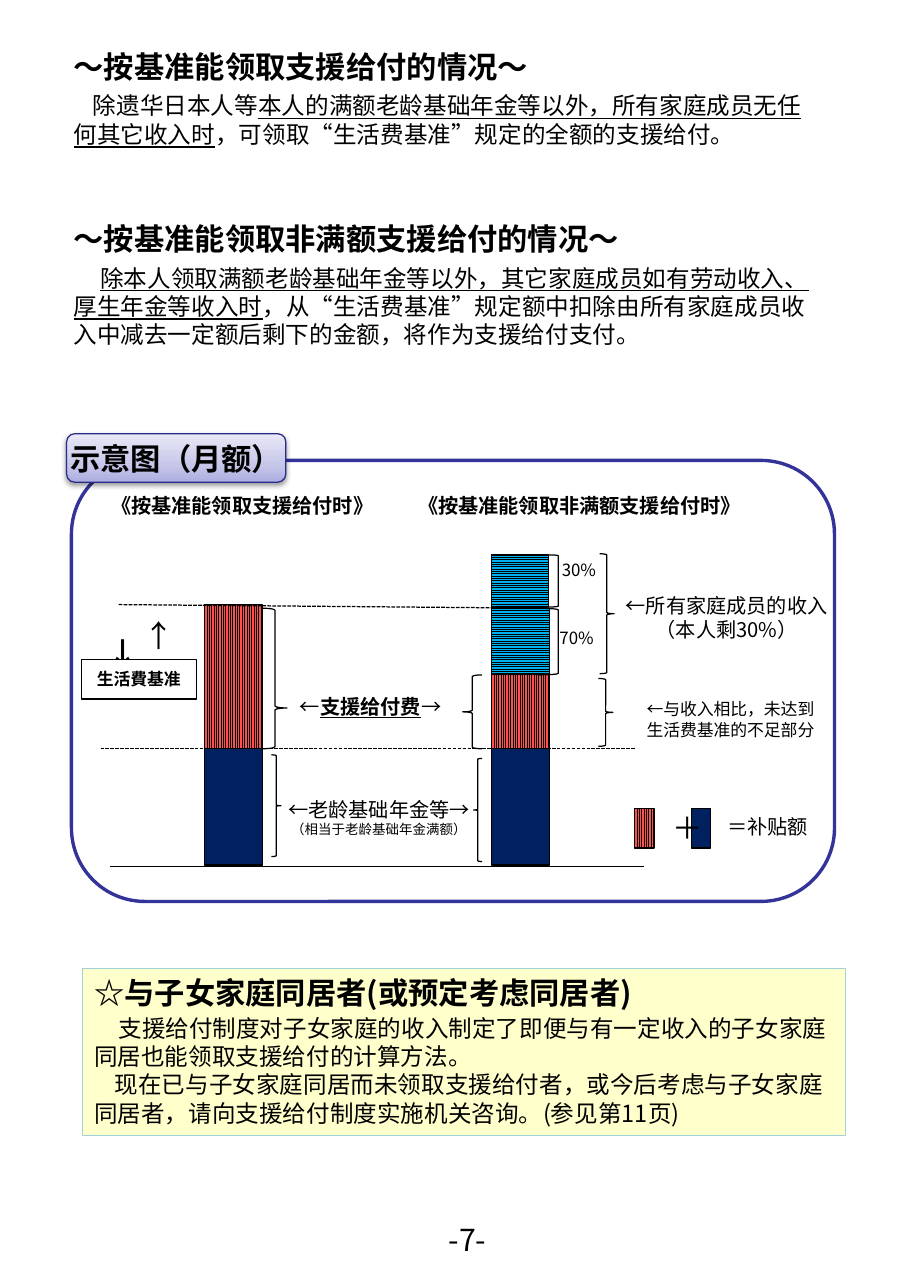
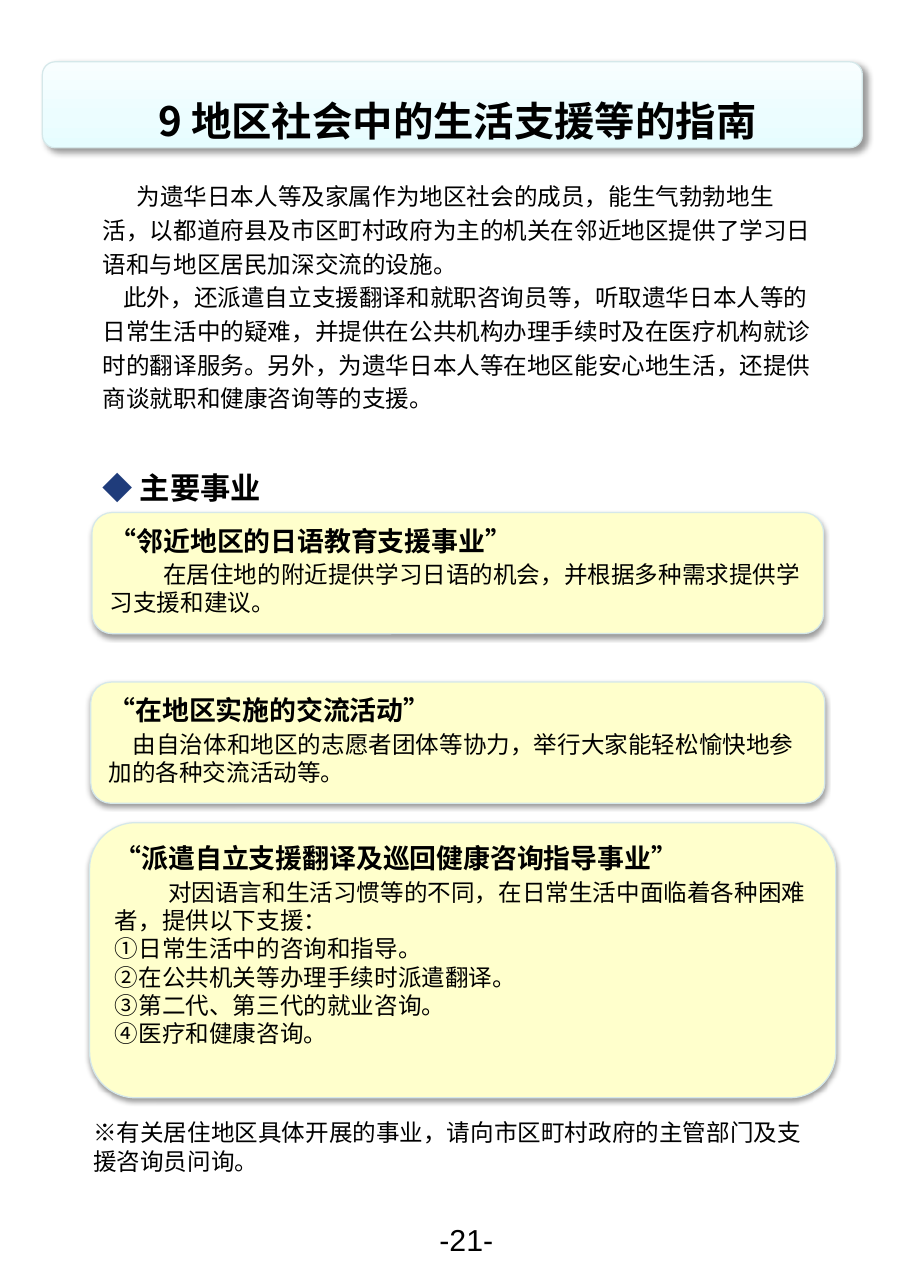
from dataclasses import dataclass
from typing import Optional

from lxml.etree import SubElement
from pptx import Presentation
from pptx.dml.color import RGBColor
from pptx.enum.dml import MSO_LINE, MSO_PATTERN
from pptx.enum.shapes import MSO_CONNECTOR, MSO_SHAPE
from pptx.enum.text import MSO_ANCHOR, PP_ALIGN
from pptx.oxml.ns import qn
from pptx.util import Pt

EMU_PER_PX = 9144
PAGE_WIDTH, PAGE_HEIGHT = 748, 1063
FONT = "Noto Sans CJK SC"
COLORS = {
    "black": "000000", "white": "FFFFFF", "frame": "333399", "tab_line": "2A2A89",
    "red": "FF5050", "navy": "002060", "blue": "00B0F0", "cream": "FFFFCC",
    "note_line": "9ED3D7", "card_line": "D5E8EA", "diamond": "1F3C7B",
}
TAB_GRADIENT = ((0, "ADADE1"), (35, "C6C6E9"), (100, "E9E9F7"))
TITLE_GRADIENT = ((0, "E6FDFF"), (35, "ECFDFF"), (100, "F8FEFF"))
INSETS = (10, 5, 10, 5)


@dataclass(frozen=True)
class Area:
    left: int
    top: int
    width: int
    height: int


@dataclass(frozen=True)
class Span:
    text: str
    size: Optional[int] = None
    bold: Optional[bool] = None
    underline: Optional[bool] = None
    color: Optional[str] = None


@dataclass(frozen=True)
class Para:
    spans: tuple[Span, ...]
    size: int = 14
    bold: bool = False
    align: PP_ALIGN = PP_ALIGN.LEFT
    indent: int = 0
    before: int = 0
    line: Optional[object] = None
    font: str = FONT


@dataclass(frozen=True)
class Shadow:
    alpha: int
    blur: float
    distance: float
    angle: int


@dataclass(frozen=True)
class Bracket:
    kind: MSO_SHAPE
    area: Area
    middle: Optional[float] = None


@dataclass(frozen=True)
class Card:
    area: Area
    heading: str
    indent: int
    body: str
    items: tuple[str, ...] = ()


SOFT_SHADOW = Shadow(38, 3.1, 1.6, 90)
TITLE_SHADOW = Shadow(40, 4, 3, 45)


def px(length: int) -> int:
    return length * EMU_PER_PX


def rgb(name: str) -> RGBColor:
    return RGBColor.from_string(COLORS[name])


def plain(text: str, size: int = 14, **style) -> Para:
    return Para((Span(text),), size, **style)


def centered(text: str, size: int, **style) -> Para:
    return plain(text, size, align=PP_ALIGN.CENTER, **style)


def write(shape, paras: list[Para], insets=INSETS, anchor=MSO_ANCHOR.TOP, wrap=True) -> None:
    frame = shape.text_frame
    frame.word_wrap = wrap
    frame.vertical_anchor = anchor
    frame.margin_left, frame.margin_top, frame.margin_right, frame.margin_bottom = map(px, insets)
    for index, para in enumerate(paras):
        paragraph = frame.add_paragraph() if index else frame.paragraphs[0]
        paragraph.alignment = para.align
        paragraph.space_before = Pt(para.before)
        if para.line:
            paragraph.line_spacing = para.line
        font = paragraph.font
        font.name, font.size, font.bold = para.font, Pt(para.size), para.bold
        font.color.rgb = rgb("black")
        properties = paragraph._p.pPr
        properties.set("indent", str(px(para.indent)))
        SubElement(properties.find(qn("a:defRPr")), qn("a:ea")).set("typeface", para.font)
        for span in para.spans:
            run = paragraph.add_run()
            run.text = span.text
            if span.size:
                run.font.size = Pt(span.size)
            if span.bold is not None:
                run.font.bold = span.bold
            if span.underline is not None:
                run.font.underline = span.underline
            if span.color:
                run.font.color.rgb = rgb(span.color)


def add_text(page, area: Area, paras: list[Para], **options):
    box = page.shapes.add_textbox(px(area.left), px(area.top), px(area.width), px(area.height))
    write(box, paras, **options)
    return box


def add_block(page, kind: MSO_SHAPE, area: Area, fill: Optional[str] = None,
              line: str = "black", width: float = 0.75):
    shape = page.shapes.add_shape(kind, px(area.left), px(area.top), px(area.width), px(area.height))
    shape.shadow.inherit = False
    shape.line.color.rgb = rgb(line)
    shape.line.width = Pt(width)
    if fill:
        shape.fill.solid()
        shape.fill.fore_color.rgb = rgb(fill)
    else:
        shape.fill.background()
    return shape


def hatch(shape, pattern: MSO_PATTERN, color: str) -> None:
    shape.fill.patterned()
    shape.fill.pattern = pattern
    shape.fill.fore_color.rgb = rgb("black")
    shape.fill.back_color.rgb = rgb(color)


def shade(shape, stops: tuple[tuple[int, str], ...]) -> None:
    shape.fill.gradient()
    shape.fill.gradient_angle = 90
    stop_list = shape._element.spPr.find(qn("a:gradFill")).find(qn("a:gsLst"))
    for old in list(stop_list):
        stop_list.remove(old)
    for position, color in stops:
        stop = SubElement(stop_list, qn("a:gs"), pos=str(position * 1000))
        SubElement(stop, qn("a:srgbClr"), val=color)


def cast(shape, shadow: Shadow) -> None:
    effects = shape._element.spPr.find(qn("a:effectLst"))
    outer = SubElement(effects, qn("a:outerShdw"), blurRad=str(Pt(shadow.blur)),
                       dist=str(Pt(shadow.distance)), dir=str(shadow.angle * 60000),
                       rotWithShape="0")
    color = SubElement(outer, qn("a:srgbClr"), val=COLORS["black"])
    SubElement(color, qn("a:alpha"), val=str(shadow.alpha * 1000))


def add_line(page, start: tuple[int, int], end: tuple[int, int], dashed: bool = False) -> None:
    line = page.shapes.add_connector(MSO_CONNECTOR.STRAIGHT, *map(px, start + end))
    line.line.color.rgb = rgb("black")
    line.line.width = Pt(0.75)
    if dashed:
        line.line.dash_style = MSO_LINE.SQUARE_DOT
    SubElement(line._element.spPr, qn("a:effectLst"))


def add_page_number(page, area: Area, text: str, font: str) -> None:
    add_text(page, area, [centered(text, 18, font=font)])


def add_support(page, area: Area) -> None:
    hatch(add_block(page, MSO_SHAPE.RECTANGLE, area), MSO_PATTERN.LIGHT_VERTICAL, "red")


def add_income(page, area: Area) -> None:
    hatch(add_block(page, MSO_SHAPE.RECTANGLE, area), MSO_PATTERN.LIGHT_HORIZONTAL, "blue")


def add_pension(page, area: Area) -> None:
    add_block(page, MSO_SHAPE.RECTANGLE, area, "navy")


def add_diagram(page) -> None:
    add_block(page, MSO_SHAPE.ROUNDED_RECTANGLE, Area(59, 380, 630, 364), "white", "frame", 2)
    for area in (Area(169, 499, 48, 212), Area(406, 557, 48, 66), Area(524, 667, 16, 33)):
        add_support(page, area)
    add_line(page, (91, 715), (532, 715))
    for area in (Area(169, 618, 48, 96), Area(406, 618, 48, 96), Area(571, 667, 16, 33)):
        add_pension(page, area)
    add_line(page, (98, 499), (451, 502), True)
    for area in (Area(406, 502, 48, 55), Area(406, 458, 47, 43)):
        add_income(page, area)
    add_line(page, (83, 618), (524, 618), True)

    right, left, square = MSO_SHAPE.RIGHT_BRACE, MSO_SHAPE.LEFT_BRACE, MSO_SHAPE.RIGHT_BRACKET
    for bracket in (
        Bracket(right, Area(224, 623, 8, 84)),
        Bracket(right, Area(217, 502, 20, 116), 0.71),
        Bracket(left, Area(391, 626, 7, 85)),
        Bracket(left, Area(382, 557, 16, 61)),
        Bracket(square, Area(453, 458, 8, 43)),
        Bracket(square, Area(445, 502, 16, 55)),
        Bracket(right, Area(495, 457, 12, 99)),
        Bracket(right, Area(494, 560, 12, 56)),
    ):
        shape = add_block(page, bracket.kind, bracket.area)
        if bracket.middle:
            shape.adjustments[1] = bracket.middle

    support = Para((Span("←"), Span("支援给付费", bold=True, underline=True), Span("→")),
                   12, align=PP_ALIGN.CENTER)
    for area, paras in (
        (Area(495, 485, 210, 70), [centered("←所有家庭成员的收入", 12), centered("（本人剩30%）", 12)]),
        (Area(224, 653, 178, 44), [centered("←老龄基础年金等→", 12),
                                   centered("（相当于老龄基础年金满额）", 8)]),
        (Area(201, 568, 210, 47), [support]),
        (Area(454, 457, 65, 27), [plain("30%", 10)]),
        (Area(383, 513, 186, 27), [centered("70%", 10)]),
        (Area(75, 402, 250, 30), [centered("《按基准能领取支援给付时》", 12, bold=True)]),
        (Area(335, 402, 287, 30), [centered("《按基准能领取非满额支援给付时》", 12, bold=True)]),
        (Area(524, 572, 165, 43), [plain("←与收入相比，未达到生活费基准的不足部分", 10)]),
    ):
        add_text(page, area, paras)
    add_text(page, Area(539, 663, 32, 40), [centered("＋", 18)], insets=(16, 5, 10, 5))
    add_text(page, Area(595, 667, 87, 30), [centered("＝补贴额", 12)], insets=(0, 5, 10, 5))

    arrows = add_text(page, Area(55, 502, 97, 131),
                      [plain("←", 18), plain("→", 18, bold=True, indent=15)])
    arrows.text_frame._txBody.bodyPr.set("vert", "eaVert")
    standard = add_block(page, MSO_SHAPE.RECTANGLE, Area(67, 544, 95, 33), "white")
    write(standard, [centered("生活費基准", 10, bold=True)], anchor=MSO_ANCHOR.MIDDLE, wrap=False)

    tab = add_block(page, MSO_SHAPE.ROUNDED_RECTANGLE, Area(55, 358, 181, 40), line="tab_line")
    shade(tab, TAB_GRADIENT)
    cast(tab, SOFT_SHADOW)
    write(tab, [centered("示意图（月额）", 18, bold=True)], anchor=MSO_ANCHOR.MIDDLE, wrap=False)


def build_benefit_page(page) -> None:
    add_page_number(page, Area(335, 1003, 102, 40), "-7-", FONT)
    add_text(page, Area(51, 35, 630, 124), [
        plain("～按基准能领取支援给付的情况～", 18, bold=True),
        Para((Span("除遗华日本人等"),
              Span("本人的满额老龄基础年金等以外，所有家庭成员无任何其它收入时", underline=True),
              Span("，可领取“生活费基准”规定的全额的支援给付。")), indent=16, before=4),
    ])
    add_text(page, Area(51, 177, 630, 118), [
        plain("～按基准能领取非满额支援给付的情况～", 18, bold=True),
        Para((Span("除本人领取满额老龄基础年金等以外，其它家庭成员如有劳动收入、厚生年金等收入时",
                   underline=True),
              Span("，从“生活费基准”规定额中扣除由所有家庭成员收入中减去一定额后剩下的金额，"
                   "将作为支援给付支付。")), indent=22, before=4),
    ])
    add_diagram(page)
    note = add_block(page, MSO_SHAPE.RECTANGLE, Area(68, 799, 630, 138), "cream", "note_line")
    write(note, [
        plain("☆与子女家庭同居者(或预定考虑同居者)", 18, bold=True),
        plain("支援给付制度对子女家庭的收入制定了即便与有一定收入的子女家庭同居也能领取支援给付的计算方法。",
              indent=20, before=2),
        plain("现在已与子女家庭同居而未领取支援给付者，或今后考虑与子女家庭同居者，"
              "请向支援给付制度实施机关咨询。(参见第11页)", indent=17),
    ])


def add_card(page, card: Card) -> None:
    shape = add_block(page, MSO_SHAPE.ROUNDED_RECTANGLE, card.area, "cream", "card_line")
    cast(shape, SOFT_SHADOW)
    write(shape, [plain(card.heading, 16, bold=True),
                  plain(card.body, indent=card.indent, before=2),
                  *map(plain, card.items)])


def build_community_page(page) -> None:
    add_page_number(page, Area(319, 1003, 132, 40), "-21-", "Arial")
    title = add_block(page, MSO_SHAPE.ROUNDED_RECTANGLE, Area(35, 51, 677, 71), line="card_line")
    title.adjustments[0] = 0.15
    shade(title, TITLE_GRADIENT)
    cast(title, TITLE_SHADOW)
    write(title, [centered("9 地区社会中的生活支援等的指南", 24, bold=True, line=1.5)],
          insets=(18, 5, 10, 5))
    add_text(page, Area(75, 141, 606, 256), [
        plain(text, indent=indent, line=Pt(20)) for indent, text in (
            (28, "为遗华日本人等及家属作为地区社会的成员，能生气勃勃地生"),
            (0, "活，以都道府县及市区町村政府为主的机关在邻近地区提供了学习日语和与地区居民加深交流的设施。"),
            (17, "此外，还派遣自立支援翻译和就职咨询员等，听取遗华日本人等的日常生活中的疑难，"
                 "并提供在公共机构办理手续时及在医疗机构就诊时的翻译服务。另外，"
                 "为遗华日本人等在地区能安心地生活，还提供商谈就职和健康咨询等的支援。"),
        )
    ])
    add_text(page, Area(75, 382, 260, 40),
             [Para((Span("◆ ", color="diamond"), Span("主要事业", bold=True)), 18)])
    for card in (
        Card(Area(76, 423, 604, 100), "“邻近地区的日语教育支援事业”", 44,
             "在居住地的附近提供学习日语的机会，并根据多种需求提供学习支援和建议。"),
        Card(Area(75, 563, 606, 100), "“在地区实施的交流活动”", 20,
             "由自治体和地区的志愿者团体等协力，举行大家能轻松愉快地参加的各种交流活动等。"),
        Card(Area(74, 679, 616, 227), "“派遣自立支援翻译及巡回健康咨询指导事业”", 44,
             "对因语言和生活习惯等的不同，在日常生活中面临着各种困难者，提供以下支援：",
             ("①日常生活中的咨询和指导。", "②在公共机关等办理手续时派遣翻译。",
              "③第二代、第三代的就业咨询。", "④医疗和健康咨询。")),
    ):
        add_card(page, card)
    add_text(page, Area(67, 918, 622, 57),
             [plain("※有关居住地区具体开展的事业，请向市区町村政府的主管部门及支援咨询员问询。")])


def main() -> None:
    deck = Presentation()
    deck.slide_width, deck.slide_height = px(PAGE_WIDTH), px(PAGE_HEIGHT)
    for build in (build_benefit_page, build_community_page):
        build(deck.slides.add_slide(deck.slide_layouts[6]))
    deck.save("out.pptx")


if __name__ == "__main__":
    main()
